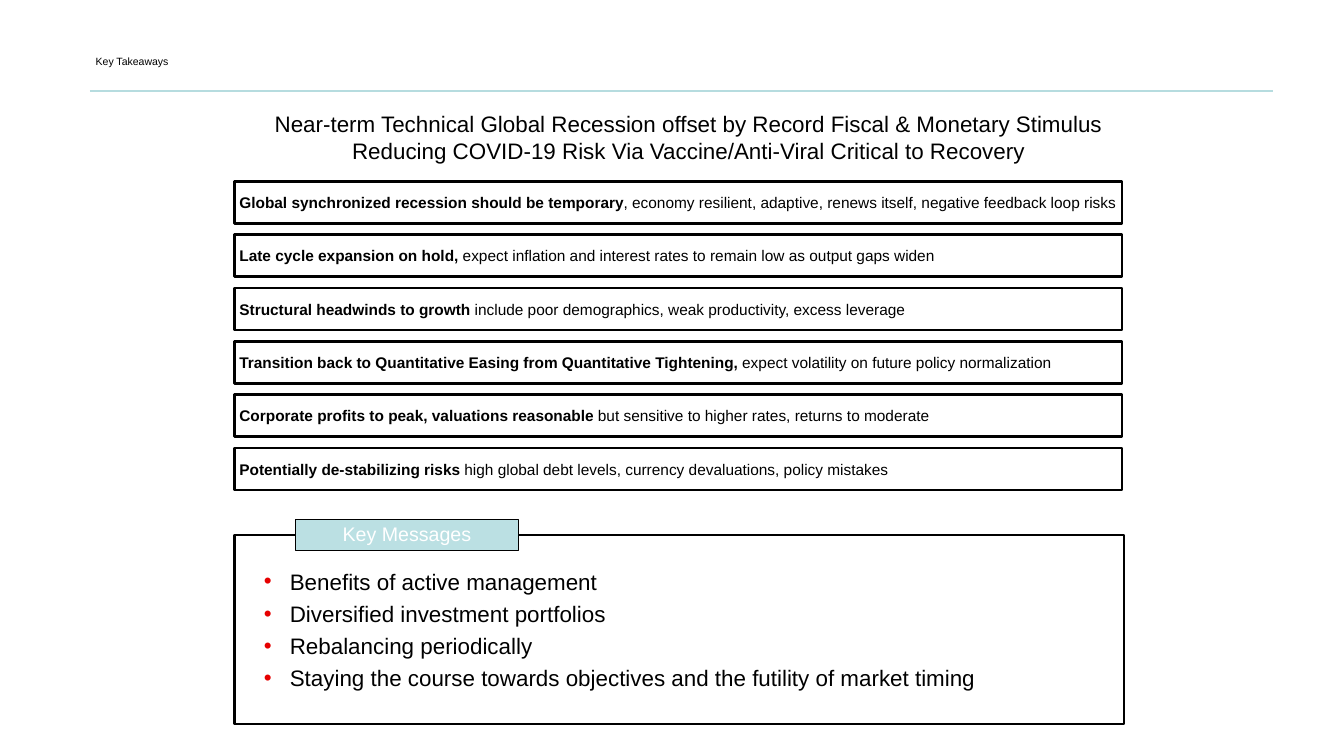
"""Build the Key Takeaways slide with its boxed points and key messages."""
from lxml import etree
from pptx import Presentation
from pptx import util as u
from pptx.dml.color import RGBColor
from pptx.enum import shapes, text
from pptx.oxml import ns

BLACK = RGBColor(0x00, 0x00, 0x00)
WHITE = RGBColor(0xFF, 0xFF, 0xFF)
TEAL = RGBColor(0xBB, 0xE0, 0xE3)
RULE = RGBColor(0xB6, 0xDC, 0xDF)
RED = RGBColor(0xE6, 0x00, 0x00)

LABEL = "Key Takeaways"
TITLE = [
    "Near-term Technical Global Recession offset by Record Fiscal & Monetary Stimulus",
    "Reducing COVID-19 Risk Via Vaccine/Anti-Viral Critical to Recovery",
]
POINTS = [
    ("Global synchronized recession should be temporary",
     ", economy resilient, adaptive, renews itself, negative feedback loop risks"),
    ("Late cycle expansion on hold, ",
     "expect inflation and interest rates to remain low as output gaps widen"),
    ("Structural headwinds to growth ",
     "include poor demographics, weak productivity, excess leverage"),
    ("Transition back to Quantitative Easing from Quantitative Tightening, ",
     "expect volatility on future policy normalization"),
    ("Corporate profits to peak, valuations reasonable ",
     "but sensitive to higher rates, returns to moderate"),
    ("Potentially de-stabilizing risks ",
     "high global debt levels, currency devaluations, policy mistakes"),
]
HEAD = "Key Messages"
NOTES = [
    "Benefits of active management",
    "Diversified investment portfolios",
    "Rebalancing periodically",
    "Staying the course towards objectives and the futility of market timing",
]

LEFT, WIDE = 200.9, 761
TOP, STEP, HIGH = 155.5, 45.7, 36
TAB, HANG = 43.2, 22.3
MIDDLE = text.MSO_ANCHOR.MIDDLE
CENTER = text.PP_ALIGN.CENTER


def style(item, form):
    for key, val in form.items():
        setattr(item, key, val)


def frame(shape, pads, anchor=text.MSO_ANCHOR.TOP):
    body = shape.text_frame
    sides = ("margin_left", "margin_top", "margin_right", "margin_bottom")
    style(body, dict(zip(sides, map(u.Pt, pads)), word_wrap=True, vertical_anchor=anchor))
    return body


def label(slide, area, pads):
    return frame(slide.shapes.add_textbox(*map(u.Pt, area)), pads)


def box(slide, area, fill, width, pads):
    shape = slide.shapes.add_shape(shapes.MSO_SHAPE.RECTANGLE, *map(u.Pt, area))
    shape.shadow.inherit = False
    shape.fill.solid()
    shape.fill.fore_color.rgb = fill
    shape.line.color.rgb = BLACK
    shape.line.width = u.Pt(width)
    return frame(shape, pads, MIDDLE)


def write(para, words, size, color=BLACK, bold=False):
    run = para.add_run()
    run.text = words
    style(run.font, {"name": "Arial", "size": u.Pt(size), "bold": bold})
    run.font.color.rgb = color


def bullet(para):
    props = para._p.get_or_add_pPr()
    props.set("marL", str(u.Pt(TAB)))
    props.set("indent", str(-u.Pt(HANG)))
    tint = etree.SubElement(props, ns.qn("a:buClr"))
    etree.SubElement(tint, ns.qn("a:srgbClr"), val=str(RED))
    etree.SubElement(props, ns.qn("a:buFont"), typeface="Arial")
    etree.SubElement(props, ns.qn("a:buChar"), char="•")


def main():
    deck = Presentation()
    style(deck, {"slide_width": u.Pt(1152), "slide_height": u.Pt(648)})
    slide = deck.slides.add_slide(deck.slide_layouts[6])

    ends = map(u.Pt, (77, 78, 1091, 78))
    rule = slide.shapes.add_connector(shapes.MSO_CONNECTOR.STRAIGHT, *ends)
    rule.line.color.rgb = RULE
    rule.line.width = u.Pt(1.5)
    etree.SubElement(rule._element.spPr, ns.qn("a:effectLst"))

    para = label(slide, (201.6, 94.3, 777.6, 54.7), (0, 0, 0, 0)).paragraphs[0]
    para.alignment = CENTER
    write(para, TITLE[0], 19.2)
    para.add_line_break()
    write(para, TITLE[1], 19.2)

    para = label(slide, (82, 40.3, 294.5, 36.7), (0, 7.2, 0, 0)).paragraphs[0]
    write(para, LABEL, 9)

    for row, (lead, rest) in enumerate(POINTS):
        area = (LEFT, TOP + row * STEP, WIDE, HIGH)
        para = box(slide, area, WHITE, 2.25, (4.3, 8.6, 0, 8.6)).paragraphs[0]
        para.alignment = text.PP_ALIGN.LEFT
        write(para, lead, 13.2, bold=True)
        write(para, rest, 13.2)

    body = box(slide, (LEFT, 458.6, 762.5, 162), WHITE, 2.25, (4.3, 8.6, 4.3, 8.6))
    for row, note in enumerate(NOTES):
        para = body.add_paragraph() if row else body.paragraphs[0]
        bullet(para)
        para.alignment = text.PP_ALIGN.LEFT
        if row:
            para.space_before = u.Pt(4.6)
        write(para, note, 19.2)

    area = (253.4, 445, 190.8, 26.6)
    para = box(slide, area, TEAL, 0.75, (8.6, 8.6, 8.6, 8.6)).paragraphs[0]
    style(para, {"alignment": CENTER, "line_spacing": 0.9})
    write(para, HEAD, 16.8, WHITE)

    deck.save("out.pptx")


if __name__ == "__main__":
    main()
